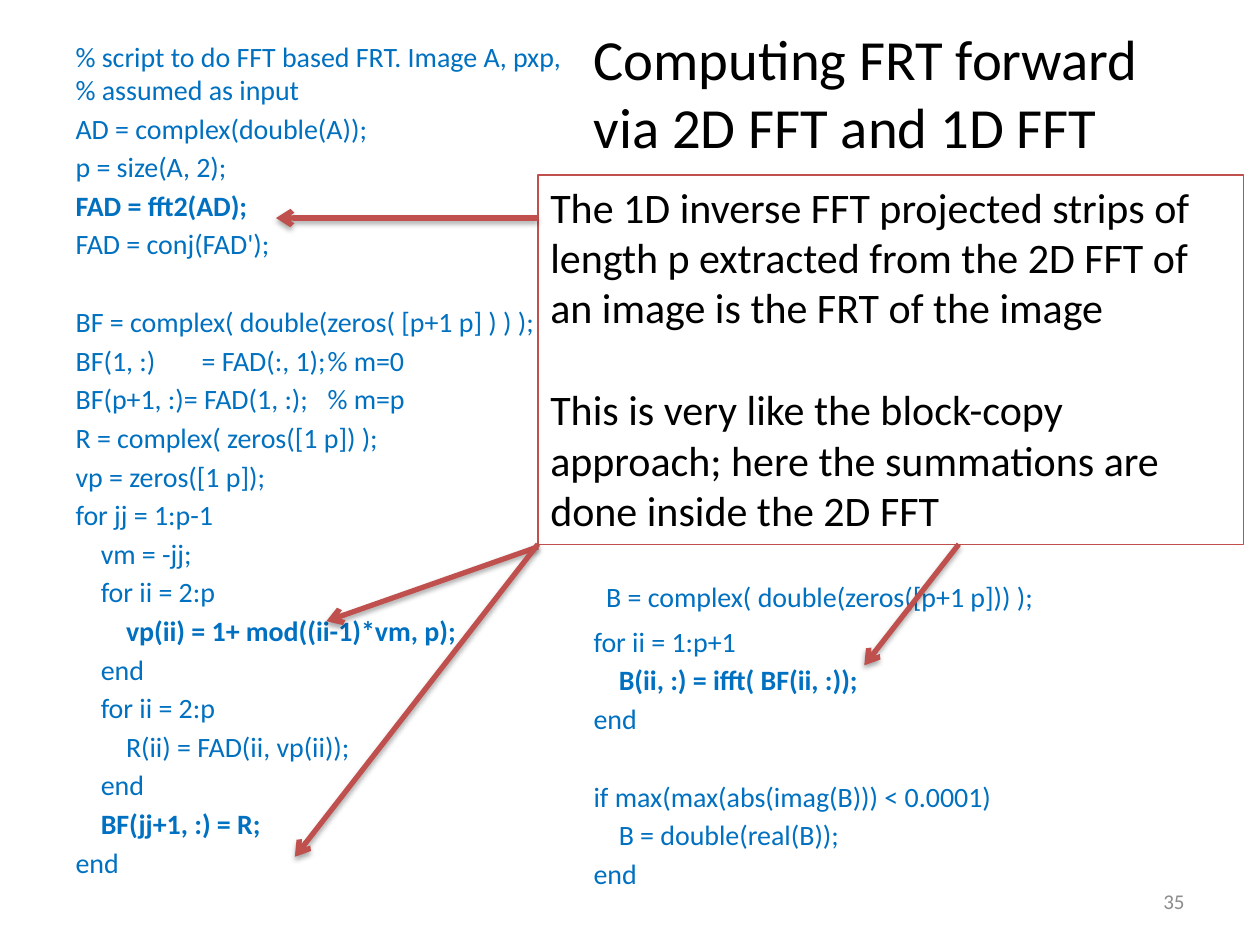
import lxml.etree
import pptx
import pptx.dml.color
import pptx.enum.shapes
import pptx.enum.text
import pptx.oxml
import pptx.oxml.ns
import pptx.util

Pt = pptx.util.Pt
Align = pptx.enum.text.PP_ALIGN
Anchor = pptx.enum.text.MSO_ANCHOR

FONT = "Calibri"
BLACK, BLUE, RED, GREY = "000000", "0070C0", "C0504D", "8C8C8C"
CODE_SIZE = 16
CODE_GAP = 2.85
BLANK_LINE = 22.4
INDENT_STEP = 14.4
CODE_TABS = (63.4, 141)

# Each code line: text, then optional indent level, bold and extra space above.
SETUP_CODE = [
    ("% script to do FFT based FRT. Image A, pxp,\v% assumed as input", {}),
    ("AD = complex(double(A));", {}),
    ("p = size(A, 2);", {}),
    ("FAD = fft2(AD);", {"bold": True}),
    ("FAD = conj(FAD');", {}),
    ("BF = complex( double(zeros( [p+1 p] ) ) );", {"extra": BLANK_LINE}),
    ("BF(1, :)\t= FAD(:, 1);\t% m=0", {"tabs": CODE_TABS}),
    ("BF(p+1, :)= FAD(1, :);\t% m=p", {"tabs": CODE_TABS}),
    ("R = complex( zeros([1 p]) );", {}),
    ("vp = zeros([1 p]);", {}),
    ("for jj = 1:p-1", {}),
    ("vm = -jj;", {"level": 1}),
    ("for ii = 2:p", {"level": 1}),
    ("vp(ii) = 1+ mod((ii-1)*vm, p);", {"level": 2, "bold": True}),
    ("end", {"level": 1}),
    ("for ii = 2:p", {"level": 1}),
    ("R(ii) = FAD(ii, vp(ii));", {"level": 2}),
    ("end", {"level": 1}),
    ("BF(jj+1, :) = R;", {"level": 1, "bold": True}),
    ("end", {}),
]
INVERSE_CODE = [
    ("B = complex( double(zeros([p+1 p])) );", {"level": 0.5}),
    ("for ii = 1:p+1", {"extra": 3.4}),
    ("B(ii, :) = ifft( BF(ii, :));", {"level": 1, "bold": True}),
    ("end", {}),
    ("if max(max(abs(imag(B))) < 0.0001)", {"extra": BLANK_LINE}),
    ("B = double(real(B));", {"level": 1}),
    ("end", {}),
]
CALLOUT_TEXT = [
    ("The 1D inverse FFT projected strips of length p extracted from "
     "the 2D FFT of an image is the FRT of the image", 0),
    ("This is very like the block-copy approach; here the summations "
     "are done inside the 2D FFT", 29.3),
]
ARROWS = [
    (307.4, 124.6, 157.7, 124.6),
    (307.4, 312.5, 186.5, 355),
    (547.9, 311, 493.9, 380.2),
    (307.4, 311, 168.5, 489.6),
]


def colour(value):
    """Return the colour of a hex string."""
    return pptx.dml.color.RGBColor.from_string(value)


def place(box, left, top, width, height):
    """Move and size a box, in points."""
    box.left, box.top = Pt(left), Pt(top)
    box.width, box.height = Pt(width), Pt(height)


def prepare_frame(box, anchor=Anchor.TOP):
    """Return the cleared, wrapping text frame of a box."""
    frame = box.text_frame
    frame.clear()
    frame.word_wrap = True
    frame.auto_size = pptx.enum.text.MSO_AUTO_SIZE.NONE
    frame.vertical_anchor = anchor
    return frame


def write(frame, text, size, color=BLACK, bold=False, align=Align.LEFT, before=0):
    """Add one formatted paragraph to a frame and return it."""
    para = frame.paragraphs[0] if not frame.text else frame.add_paragraph()
    para.text = text
    para.alignment = align
    para.space_before = Pt(before)
    for span in para.runs:
        span.font.name = FONT
        span.font.size = Pt(size)
        span.font.bold = bold
        span.font.color.rgb = colour(color)
    return para


def set_indent(para, left, tabs=()):
    """Remove the bullet and set the left margin and tab stops."""
    qn = pptx.oxml.ns.qn
    props = para._p.get_or_add_pPr()
    props.set("marL", str(int(Pt(left))))
    props.set("indent", "0")
    lxml.etree.SubElement(props, qn("a:buNone"))
    if tabs:
        stops = lxml.etree.SubElement(props, qn("a:tabLst"))
        for stop in tabs:
            lxml.etree.SubElement(stops, qn("a:tab"), pos=str(int(Pt(stop))), algn="l")


def fill_code(box, lines):
    """Write a list of code lines into a placeholder."""
    frame = prepare_frame(box)
    for text, style in lines:
        para = write(frame, text, CODE_SIZE, color=BLUE,
                     bold=style.get("bold", False),
                     before=CODE_GAP + style.get("extra", 0))
        set_indent(para, style.get("level", 0) * INDENT_STEP, style.get("tabs", ()))
    return frame


def add_callout(page):
    """Add the outlined explanation box."""
    box = page.shapes.add_shape(pptx.enum.shapes.MSO_SHAPE.RECTANGLE,
                                Pt(307.4), Pt(100), Pt(403.2), Pt(211))
    box.shadow.inherit = False
    box.fill.background()
    box.line.color.rgb = colour(RED)
    box.line.width = Pt(0.75)
    frame = prepare_frame(box)
    for text, before in CALLOUT_TEXT:
        write(frame, text, 24, before=before)


def add_page_number(page, number):
    """Add the page number at the lower right."""
    box = page.shapes.add_textbox(Pt(516.2), Pt(500.4), Pt(167.8), Pt(28.8))
    write(prepare_frame(box, Anchor.MIDDLE), number, 12, color=GREY, align=Align.RIGHT)


def add_arrow(page, *ends):
    """Add a red arrow with a soft shadow from one point to another."""
    arrow = page.shapes.add_connector(pptx.enum.shapes.MSO_CONNECTOR.STRAIGHT,
                                      *[Pt(value) for value in ends])
    arrow.line.color.rgb = colour(RED)
    arrow.line.width = Pt(3)
    lxml.etree.SubElement(arrow.line._get_or_add_ln(),
                          pptx.oxml.ns.qn("a:tailEnd"), type="arrow")
    arrow._element.spPr.append(pptx.oxml.parse_xml(
        f'<a:effectLst {pptx.oxml.ns.nsdecls("a")}>'
        f'<a:outerShdw blurRad="{int(Pt(3.1))}" dist="{int(Pt(1.8))}" '
        'dir="5400000" rotWithShape="0"><a:srgbClr val="000000">'
        '<a:alpha val="35000"/></a:srgbClr></a:outerShdw></a:effectLst>'))


def main():
    """Build and save the deck."""
    deck = pptx.Presentation()
    deck.slide_width, deck.slide_height = Pt(720), Pt(540)
    page = deck.slides.add_slide(deck.slide_layouts.get_by_name("Two Content"))
    title, setup, inverse = page.placeholders

    place(title, 332, 18.7, 366.5, 67.7)
    write(prepare_frame(title, Anchor.MIDDLE),
          "Computing FRT forward via 2D FFT and 1D FFT", 32.4)
    place(setup, 36, 18.7, 324, 511.2)
    fill_code(setup, SETUP_CODE)
    place(inverse, 332, 312.5, 324, 219.6)
    fill_code(inverse, INVERSE_CODE).margin_top = Pt(18.8)

    add_callout(page)
    add_page_number(page, "35")
    for ends in ARROWS:
        add_arrow(page, *ends)
    deck.save("out.pptx")


if __name__ == "__main__":
    main()
